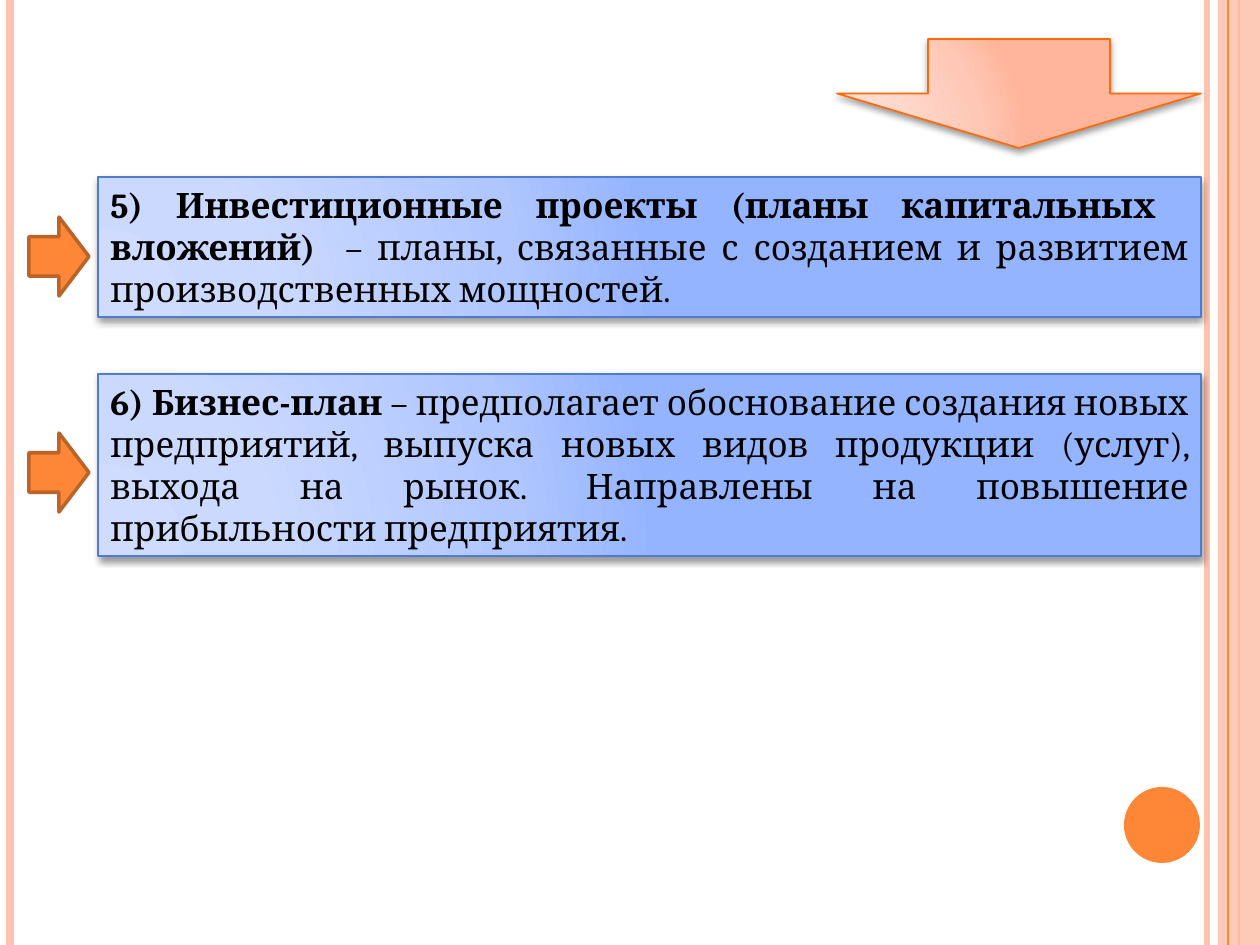
from pptx import Presentation
from pptx.dml.color import RGBColor
from pptx.enum.shapes import MSO_CONNECTOR, MSO_SHAPE
from pptx.enum.text import MSO_ANCHOR, PP_ALIGN
from pptx.oxml import parse_xml
from pptx.oxml.ns import nsdecls, qn
from pptx.util import Pt
from lxml.etree import SubElement

PX = 914400 / 126
WIDTH, HEIGHT = 1260, 945
COLORS = {
    "orange": "FE8637",
    "pale": "FEC3AE",
    "arrow_line": "BC6329",
    "down_line": "FF6B0A",
    "box_line": "4F7CCF",
    "text": "000000",
}
BLUE_STOPS = {0: "CFDCFF", 30: "CBD9FF", 75: "AFC6FF", 100: "95B4FF"}
PEACH_STOPS = {0: "FFDED5", 30: "FFDBD0", 75: "FFC8B6", 100: "FFB59B"}

presentation = Presentation()
presentation.slide_width = round(WIDTH * PX)
presentation.slide_height = round(HEIGHT * PX)
slide = presentation.slides.add_slide(presentation.slide_layouts[6])


def add_shape(kind, box, fill=None, line=None, line_width=1):
    shape = slide.shapes.add_shape(kind, *[round(value * PX) for value in box])
    shape.shadow.inherit = False
    if fill:
        shape.fill.solid()
        shape.fill.fore_color.rgb = RGBColor.from_string(COLORS[fill])
    if line:
        shape.line.color.rgb = RGBColor.from_string(COLORS[line])
        shape.line.width = Pt(line_width)
    else:
        shape.line.fill.background()
    return shape


def add_glow_and_shadow(shape, stops):
    properties = shape.element.spPr
    shape.fill.gradient()
    stop_xml = "".join(
        f'<a:gs pos="{position * 1000}"><a:srgbClr val="{color}"/></a:gs>'
        for position, color in stops.items()
    )
    gradient = parse_xml(
        f'<a:gradFill {nsdecls("a")} rotWithShape="1"><a:gsLst>{stop_xml}</a:gsLst>'
        '<a:path path="circle"><a:fillToRect l="5000" t="100000" r="120000" b="10000"/>'
        "</a:path></a:gradFill>"
    )
    properties.replace(properties.find(qn("a:gradFill")), gradient)
    properties.find(qn("a:effectLst")).append(parse_xml(
        f'<a:outerShdw {nsdecls("a")} blurRad="{Pt(4)}" dist="{Pt(2)}" dir="5400000" '
        'rotWithShape="0"><a:srgbClr val="000000"><a:alpha val="40000"/></a:srgbClr>'
        "</a:outerShdw>"
    ))


for x, color, width in [
    (1207, "pale", 3),
    (10, "pale", 4.5),
    (1239, "orange", 1.5),
    (1228, "orange", 0.75),
]:
    if x == 1239:
        band_position = len(slide.shapes)
    rule = slide.shapes.add_connector(
        MSO_CONNECTOR.STRAIGHT, round(x * PX), 0, round(x * PX), round(HEIGHT * PX)
    )
    rule.line.color.rgb = RGBColor.from_string(COLORS[color])
    rule.line.width = Pt(width)
    SubElement(rule.element.spPr, qn("a:effectLst"))
    if x == 1239:
        band = add_shape(MSO_SHAPE.RECTANGLE, (1218, 0, 42, HEIGHT), "pale")
        band_color = band.element.spPr.find(qn("a:solidFill"))[0]
        SubElement(band_color, qn("a:alpha"), val="87000")

add_shape(MSO_SHAPE.OVAL, (1124, 787, 76, 76), "orange")

plans = [
    (374, 182, "6) Бизнес-план ",
     "– предполагает обоснование создания новых предприятий, выпуска новых видов "
     "продукции (услуг), выхода на рынок. Направлены на повышение прибыльности предприятия."),
    (177, 140, "5) Инвестиционные проекты (планы капитальных  вложений)  ",
     "– планы, связанные с созданием и развитием производственных мощностей."),
]
for top, height, heading, description in plans:
    plan_box = add_shape(MSO_SHAPE.RECTANGLE, (98, top, 1103, height), line="box_line")
    add_glow_and_shadow(plan_box, BLUE_STOPS)
    text_frame = plan_box.text_frame
    text_frame.word_wrap = True
    text_frame.vertical_anchor = MSO_ANCHOR.TOP
    paragraph = text_frame.paragraphs[0]
    paragraph.alignment = PP_ALIGN.JUSTIFY
    for text, bold in [(heading, True), (description, False)]:
        run = paragraph.add_run()
        run.text = text
        run.font.name = "Cambria"
        run.font.size = Pt(20)
        run.font.bold = bold
        run.font.color.rgb = RGBColor.from_string(COLORS["text"])

down_arrow = add_shape(MSO_SHAPE.DOWN_ARROW, (837, 39, 364, 109), line="down_line")
add_glow_and_shadow(down_arrow, PEACH_STOPS)

for top in (217, 433):
    add_shape(MSO_SHAPE.RIGHT_ARROW, (29, top, 60, 79), "orange", "arrow_line", 2)

presentation.save("out.pptx")
